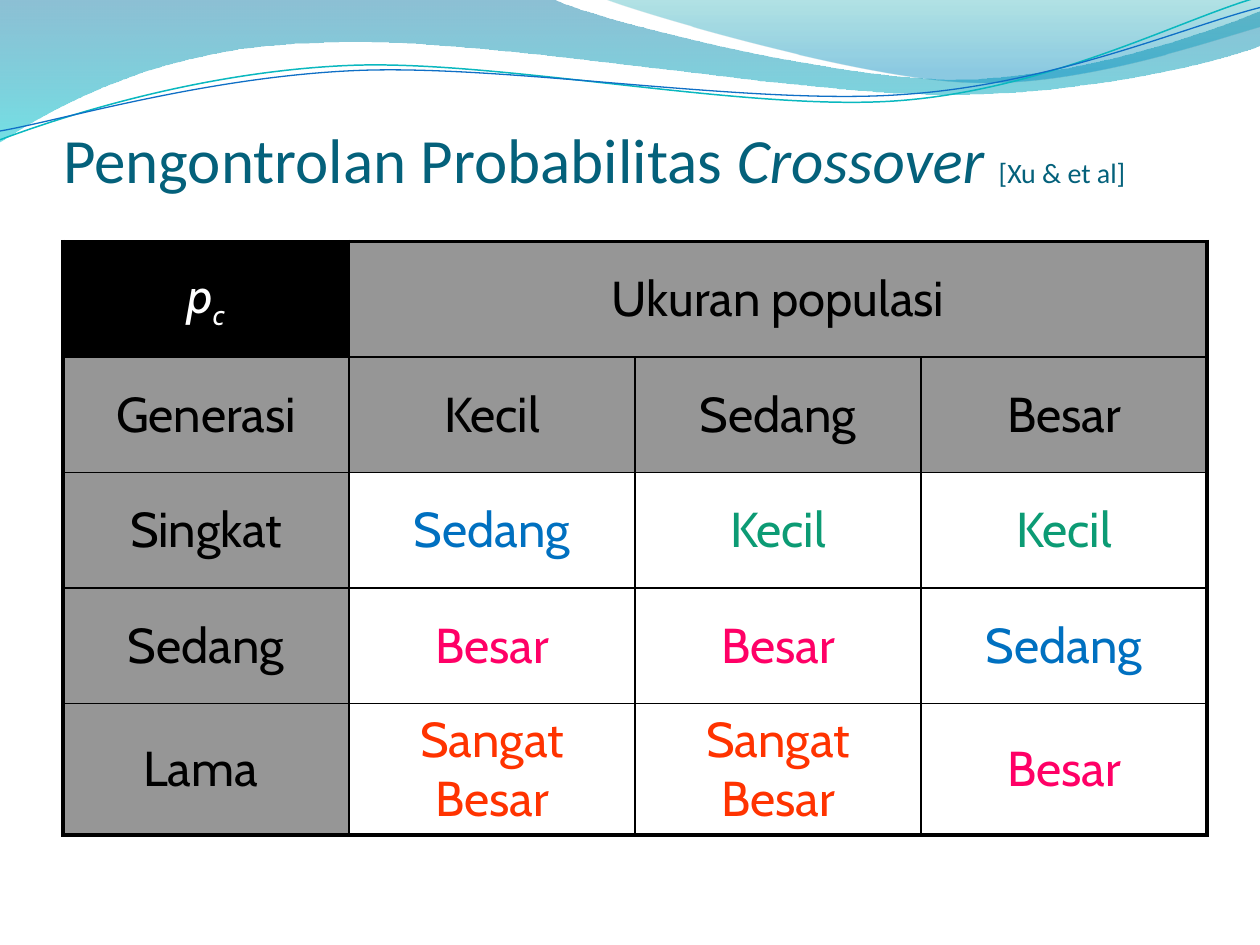
from lxml.etree import SubElement as Sub
from pptx import Presentation
from pptx.dml.color import RGBColor as RGB
from pptx.enum.text import MSO_ANCHOR as Anchor, MSO_AUTO_SIZE as Auto, PP_ALIGN as Align
from pptx.oxml import parse_xml
from pptx.oxml.ns import nsdecls, qn
from pptx.util import Cm, Pt

COLORS = {
    "title": "04617B", "black": "000000", "white": "FFFFFF", "head": "969696",
    "Sedang": "0070C0", "Kecil": "0C9B74", "Besar": "FF0066", "Sangat Besar": "FF3300",
    "teal": "0AB8BF", "blue": "0F6FC6",
    "deep": "0074A1", "aqua": "00C6CF", "sea": "00A1A9", "sky": "008BBF",
}

GRID = [
    ["pc", "Ukuran populasi", "", ""],
    ["Generasi", "Kecil", "Sedang", "Besar"],
    ["Singkat", "Sedang", "Kecil", "Kecil"],
    ["Sedang", "Besar", "Besar", "Sedang"],
    ["Lama ", "Sangat Besar", "Sangat Besar", "Besar"],
]

BANDS = [
    ((0, 0),
     [[(440, 0)],
      [(476, 17), (664, 63), (758, 63), (853, 63), (958, 26), (1000, 9)],
      [(1001, 36)],
      [(983, 44), (870, 76), (746, 75), (622, 75), (382, 28), (257, 34),
       (129, 36), (46, 83), (-1, 113)]],
     [("deep", 45, 0), ("aqua", 55, 1)]),
    ((479, -1),
     [[(509, 11), (682, 62), (769, 65), (856, 69), (961, 32), (1000, 21)],
      [(1000, 0)]],
     [("sea", 30, 0), ("sky", 45, 0.8)]),
]

CURVES = [
    ((0, 111), [(48, 93), (158, 57), (277, 52), (395, 47), (593, 89), (713, 80),
                (833, 71), (938, 15), (998, -2)], "teal", 0.85),
    ((0, 104), [(47, 96), (164, 61), (283, 56), (403, 51), (597, 84), (717, 75),
                (836, 67), (941, 21), (1000, 6)], "blue", 0.75),
]


def color(name):
    return RGB.from_string(COLORS[name])


def bend(legs, parts):
    for part in parts:
        group, legs = legs[:len(part)], legs[len(part):]
        if len(part) == 1:
            continue
        for k in range(0, len(group), 3):
            first, *rest = group[k:k + 3]
            first.tag = qn("a:cubicBezTo")
            for leg in rest:
                first.append(leg[0])
                leg.getparent().remove(leg)


def draw(slide, box, start, parts, close):
    left, top, width = box
    unit = width / 1000
    dots = [start] + [dot for part in parts for dot in part]
    spots = [(left + x * unit, top + y * unit) for x, y in dots]
    pen = slide.shapes.build_freeform(*spots[0])
    pen.add_line_segments(spots[1:], close=close)
    shape = pen.convert_to_shape()
    bend(list(shape._element.iter(qn("a:lnTo"))), parts)
    shape.shadow.inherit = False
    return shape


def add_waves(slide, box):
    for start, parts, stops in BANDS:
        band = draw(slide, box, start, parts, True)
        band.line.fill.background()
        band.fill.gradient()
        band.fill.gradient_angle = 270
        for stop, (name, _, place) in zip(band.fill.gradient_stops, stops):
            stop.color.rgb = color(name)
            stop.position = place
        tints = band._element.spPr.iter(qn("a:srgbClr"))
        for tint, (_, alpha, _) in zip(tints, stops):
            Sub(tint, qn("a:alpha")).set("val", str(alpha * 1000))
    for start, part, name, width in CURVES:
        curve = draw(slide, box, start, [part], False)
        curve.fill.background()
        curve.line.color.rgb = color(name)
        curve.line.width = Pt(width)


def add_title(slide, box):
    title = slide.shapes.title
    slide.shapes._spTree.append(title._element)
    title.left, title.top, title.width, title.height = box
    frame = title.text_frame
    frame.auto_size = Auto.NONE
    frame.word_wrap = True
    frame.vertical_anchor = Anchor.BOTTOM
    frame.margin_left = frame.margin_right = frame.margin_bottom = 0
    para = frame.paragraphs[0]
    para.alignment = Align.LEFT
    for text, size, slant in (("Pengontrolan Probabilitas ", 36, False),
                              ("Crossover ", 36, True), ("[Xu & et al]", 16, False)):
        run = para.add_run()
        run.text = text
        font = run.font
        font.name, font.size, font.italic = "Calibri", Pt(size), slant
        font.color.rgb = color("title")


def set_edges(cell, thick):
    props = cell._tc.get_or_add_tcPr()
    for spot, side in enumerate("LRTB"):
        width = Pt(2.25 if side in thick else 1)
        props.insert(spot, parse_xml(
            f'<a:ln{side} {nsdecls("a")} w="{width}"><a:solidFill>'
            f'<a:srgbClr val="{COLORS["black"]}"/></a:solidFill></a:ln{side}>'))


def set_cell(cell, text, ink, fill):
    cell.vertical_anchor = Anchor.MIDDLE
    if fill:
        cell.fill.solid()
        cell.fill.fore_color.rgb = color(fill)
    else:
        cell.fill.background()
    para = cell.text_frame.paragraphs[0]
    para.alignment = Align.CENTER
    para.space_before = Pt(5.6)
    for part in text if text == "pc" else [text]:
        run = para.add_run()
        run.text = part
        font = run.font
        font.name, font.size = "Cabin", Pt(28)
        font.color.rgb = color(ink)
        if text == "pc":
            font.italic = True
    if text == "pc":
        run.font._element.set("baseline", "-25000")


def add_grid(slide, box):
    rows, cols = len(GRID), len(GRID[0])
    table = slide.shapes.add_table(rows, cols, *box).table
    table.first_row = table.horz_banding = False
    table.cell(0, 1).merge(table.cell(0, cols - 1))
    for r, line in enumerate(GRID):
        for c, text in enumerate(line):
            cell = table.cell(r, c)
            if text == "pc":
                ink, fill = "white", "black"
            elif r < 2 or c == 0:
                ink, fill = "black", "head"
            else:
                ink, fill = text, None
            if text:
                set_cell(cell, text, ink, fill)
            last = c == cols - 1 or cell.is_merge_origin
            sides = {"L": c == 0, "R": last, "T": r == 0, "B": r == rows - 1}
            set_edges(cell, [side for side, on in sides.items() if on])


def main():
    deck = Presentation()
    deck.slide_width, deck.slide_height = Cm(25.4), Cm(19.05)
    slide = deck.slides.add_slide(deck.slide_layouts[5])
    add_waves(slide, (0, 0, deck.slide_width))
    add_title(slide, (Cm(1.27), Cm(0.78), Cm(22.86), Cm(3.18)))
    add_grid(slide, (Cm(1.27), Cm(4.87), Cm(23.06), Cm(11.64)))
    deck.save("out.pptx")


if __name__ == "__main__":
    main()
